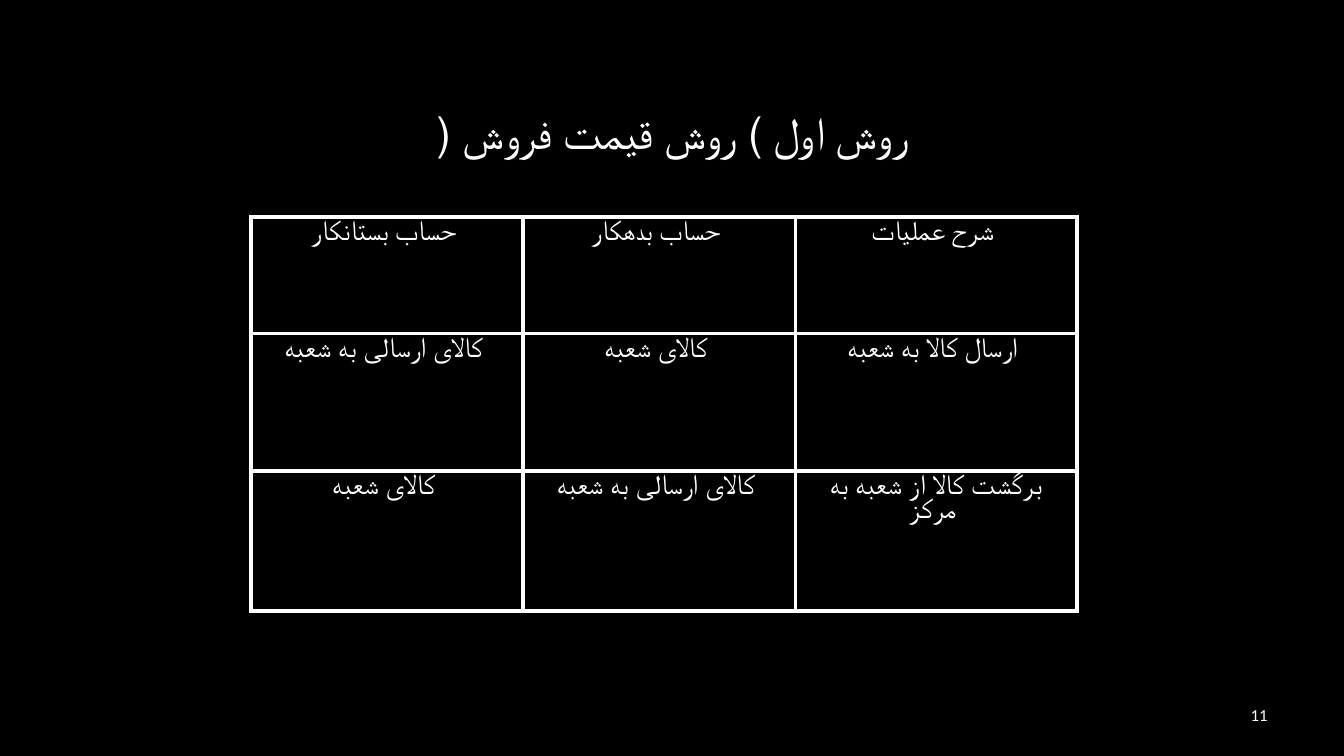
"""Build a Persian slide with a table of branch accounting entries."""
from lxml.etree import SubElement
from pptx import Presentation
from pptx.dml.color import RGBColor
from pptx.enum.text import MSO_ANCHOR, PP_ALIGN
from pptx.oxml.ns import qn
from pptx.util import Inches, Pt

COLORS = {"background": "000000", "text": "FFFFFF", "border": "FFFFFF"}
COLUMN_WIDTHS = [2.7, 2.7, 2.79]
ROW_HEIGHTS = [1.16, 1.36, 1.39]
ENTRIES = [
    ["حساب بستانکار ", "حساب بدهکار ", "شرح عمليات "],
    ["کالای ارسالی به شعبه ", "کالای شعبه ", "ارسال کالا به شعبه "],
    ["کالای شعبه ", "کالای ارسالی به شعبه ", "برگشت کالا از شعبه به مرکز "],
]


def write_text(frame, text, font, size, align=PP_ALIGN.CENTER, spacing=1.0, rtl=False):
    frame.word_wrap = True
    paragraph = frame.paragraphs[0]
    paragraph.alignment = align
    paragraph.line_spacing = spacing
    if rtl:
        paragraph._p.get_or_add_pPr().set("rtl", "1")
    run = paragraph.add_run()
    run.text = text
    run.font.name = font
    run.font.size = Pt(size)
    run.font.color.rgb = RGBColor.from_string(COLORS["text"])


def add_borders(cell, color, width):
    properties = cell._tc.get_or_add_tcPr()
    for position, side in enumerate(("a:lnL", "a:lnR", "a:lnT", "a:lnB")):
        line = SubElement(properties, qn(side), w=str(Pt(width)))
        fill = SubElement(line, qn("a:solidFill"))
        SubElement(fill, qn("a:srgbClr"), val=color)
        properties.insert(position, line)


presentation = Presentation()
presentation.slide_width = Inches(13.33)
presentation.slide_height = Inches(7.5)
slide = presentation.slides.add_slide(presentation.slide_layouts[6])
slide.background.fill.solid()
slide.background.fill.fore_color.rgb = RGBColor.from_string(COLORS["background"])

page_number = slide.shapes.add_textbox(Inches(9.56), Inches(6.83), Inches(3.11), Inches(0.52))
page_number.text_frame.vertical_anchor = MSO_ANCHOR.MIDDLE
write_text(page_number.text_frame, "11", "Calibri", 12, align=PP_ALIGN.RIGHT)

table = slide.shapes.add_table(
    len(ROW_HEIGHTS), len(COLUMN_WIDTHS), Inches(2.49), Inches(2.15),
    Inches(sum(COLUMN_WIDTHS)), Inches(sum(ROW_HEIGHTS)),
).table
table.first_row = False
table.horz_banding = False
for column, width in zip(table.columns, COLUMN_WIDTHS):
    column.width = Inches(width)
for row, height, entries in zip(table.rows, ROW_HEIGHTS, ENTRIES):
    row.height = Inches(height)
    for cell, entry in zip(row.cells, entries):
        cell.fill.background()
        add_borders(cell, COLORS["border"], 3)
        write_text(cell.text_frame, entry, "Roboto", 20, spacing=0.85)

title = slide.shapes.add_textbox(Inches(2.81), Inches(0.99), Inches(7.72), Inches(1.1))
title.text_frame.vertical_anchor = MSO_ANCHOR.TOP
write_text(title.text_frame, "روش اول ) روش قيمت فروش (", "Arial", 32, rtl=True)

presentation.save("out.pptx")
